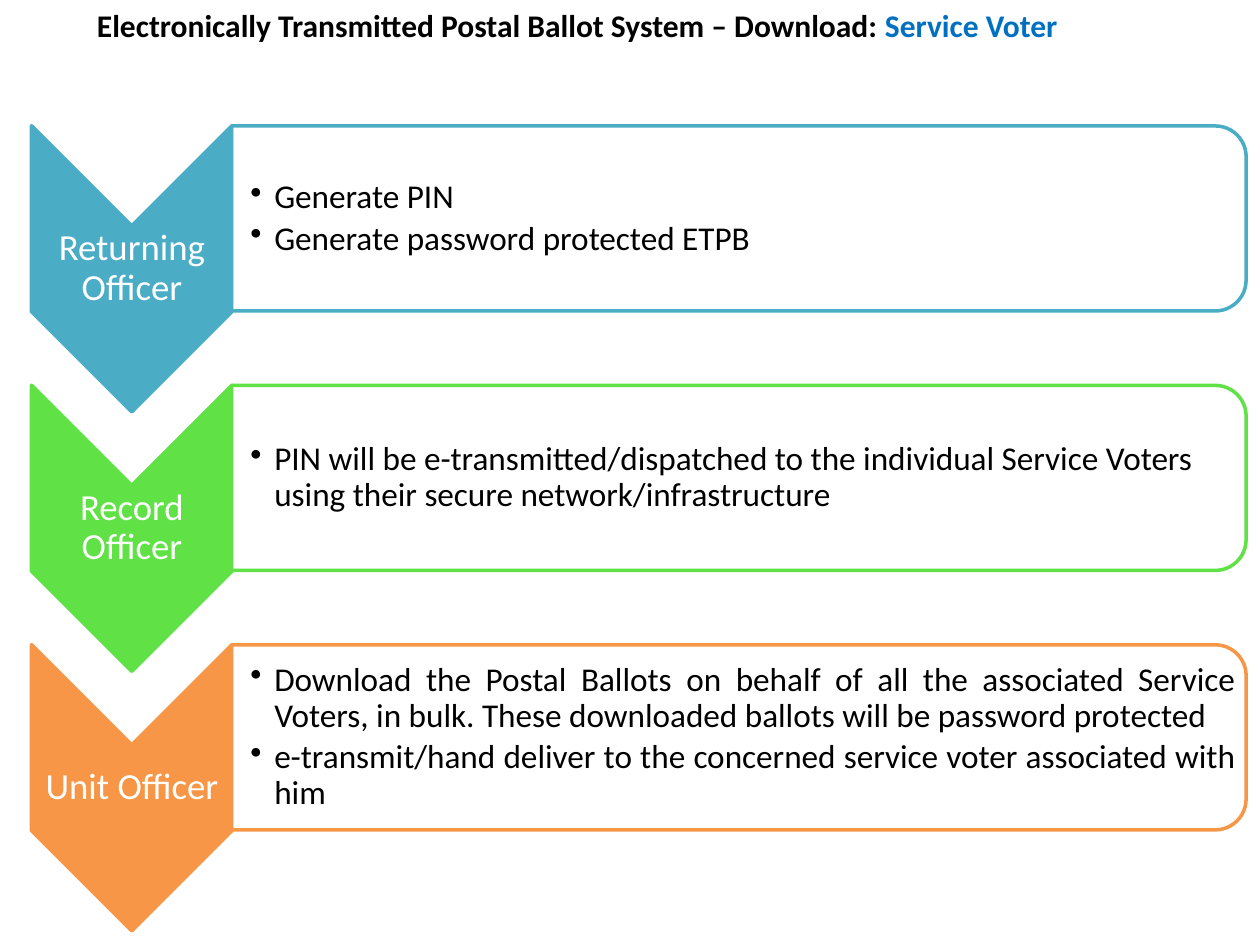
from lxml import etree
from pptx import Presentation
from pptx.dml.color import RGBColor
from pptx.enum.shapes import MSO_SHAPE
from pptx.enum.text import MSO_ANCHOR, PP_ALIGN
from pptx.oxml.ns import qn
from pptx.util import Cm, Pt

CHEVRON = MSO_SHAPE.CHEVRON
ROUND_PANEL = MSO_SHAPE.ROUND_2_SAME_RECTANGLE
TOP, MIDDLE = MSO_ANCHOR.TOP, MSO_ANCHOR.MIDDLE
LEFT, CENTER, JUSTIFY = PP_ALIGN.LEFT, PP_ALIGN.CENTER, PP_ALIGN.JUSTIFY

BLACK = RGBColor(0x00, 0x00, 0x00)
WHITE = RGBColor(0xFF, 0xFF, 0xFF)
BLUE = RGBColor(0x00, 0x70, 0xC0)
TEAL = RGBColor(0x4B, 0xAC, 0xC6)
GREEN = RGBColor(0x60, 0xE1, 0x46)
ORANGE = RGBColor(0xF7, 0x96, 0x46)

ROW_PITCH = 5.23
OFFICERS = [
    ("Returning Officer", TEAL, LEFT,
     ["Generate PIN", "Generate password protected ETPB"]),
    ("Record Officer", GREEN, LEFT,
     ["PIN will be e-transmitted/dispatched to the individual Service Voters "
      "using their secure network/infrastructure"]),
    ("Unit Officer", ORANGE, JUSTIFY,
     ["Download the Postal Ballots on behalf of all the associated Service "
      "Voters, in bulk. These downloaded ballots will be password protected",
      "e-transmit/hand deliver to the concerned service voter associated "
      "with him"]),
]


def apply(target, values):
    for name, value in values.items():
        setattr(target, name, value)


class BallotSlide:
    font_name = "Calibri"
    line_width = Pt(2)

    def __init__(self, slide):
        self.slide = slide

    def turned_shape(self, kind, box, fill, line, opacity=100):
        """Add a preset shape turned a quarter clockwise."""
        shape = self.slide.shapes.add_shape(kind, *map(Cm, box))
        shape.rotation = 90
        shape.shadow.inherit = False
        shape.fill.solid()
        shape.fill.fore_color.rgb = fill
        shape.line.color.rgb = line
        shape.line.width = self.line_width
        if opacity < 100:
            color = shape.fill._xPr.find(qn("a:solidFill"))[0]
            etree.SubElement(color, qn("a:alpha"), val=str(opacity * 1000))

    def text_frame(self, box, anchor, insets=None):
        frame = self.slide.shapes.add_textbox(*map(Cm, box)).text_frame
        apply(frame, {"word_wrap": True, "vertical_anchor": anchor})
        if insets:
            sides = ("margin_left", "margin_top", "margin_right", "margin_bottom")
            apply(frame, dict(zip(sides, map(Cm, insets))))
        return frame

    def run(self, paragraph, text, size, color, bold=False):
        run = paragraph.add_run()
        run.text = text
        apply(run.font, {"name": self.font_name, "size": Pt(size), "bold": bold})
        run.font.color.rgb = color

    def title(self, box, parts):
        paragraph = self.text_frame(box, TOP).paragraphs[0]
        paragraph.alignment = CENTER
        for text, color in parts:
            self.run(paragraph, text, 18, color, bold=True)

    def label(self, box, text):
        paragraph = self.text_frame(box, MIDDLE, [0.03] * 4).paragraphs[0]
        apply(paragraph, {"alignment": CENTER, "line_spacing": 0.9})
        self.run(paragraph, text, 21, WHITE)

    def bullets(self, box, items, alignment):
        frame = self.text_frame(box, MIDDLE, [0.38, 0.03, 0.03, 0.03])
        indent = Cm(0.48)
        for index, item in enumerate(items):
            paragraph = frame.add_paragraph() if index else frame.paragraphs[0]
            properties = paragraph._p.get_or_add_pPr()
            properties.set("marL", str(indent))
            properties.set("indent", str(-indent))
            etree.SubElement(properties, qn("a:buChar"), char="•")
            apply(paragraph, {"alignment": alignment, "line_spacing": 0.9,
                              "space_before": Pt(3 if index else 0)})
            self.run(paragraph, item, 19, BLACK)


def main():
    deck = Presentation()
    deck.slide_width, deck.slide_height = Cm(25.4), Cm(19.05)
    page = BallotSlide(deck.slides.add_slide(deck.slide_layouts[6]))

    page.title((-0.99, 0, 25.4, 1.8), [
        ("Electronically Transmitted Postal Ballot System – Download: ", BLACK),
        ("Service Voter ", BLUE),
    ])
    for row, (officer, color, alignment, duties) in enumerate(OFFICERS):
        shift = row * ROW_PITCH
        page.turned_shape(CHEVRON, (-0.23, 3.4 + shift, 5.77, 4.04), color, color)
        page.label((0.64, 4.55 + shift, 4.04, 1.73), officer)
        page.turned_shape(ROUND_PANEL, (13.03, -5.82 + shift, 3.73, 20.45),
                          WHITE, color, opacity=90)
        page.bullets((4.67, 2.72 + shift, 20.27, 3.38), duties, alignment)

    deck.save("out.pptx")


if __name__ == "__main__":
    main()
